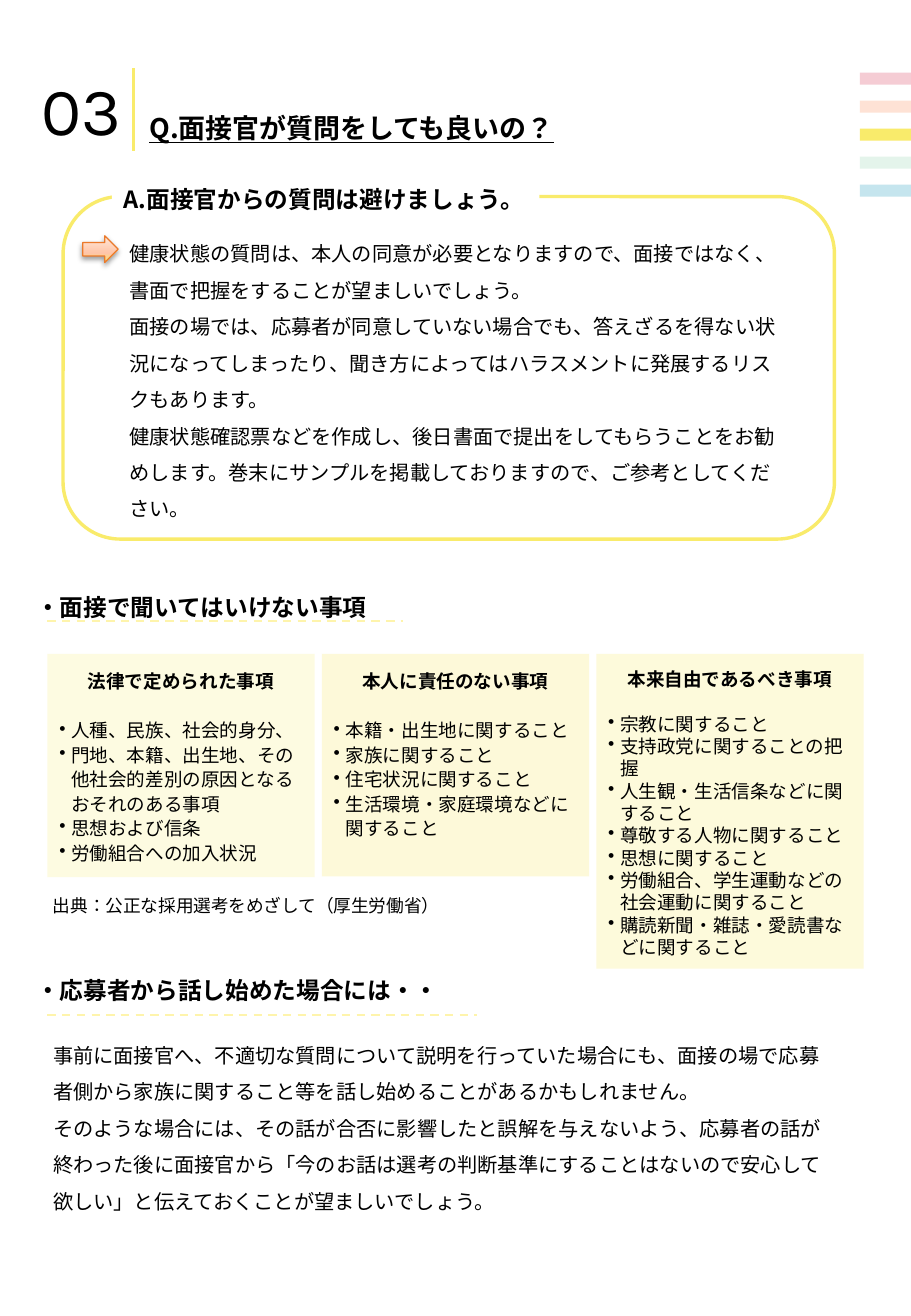
from dataclasses import dataclass

from lxml import etree
from pptx import Presentation
from pptx.dml.color import RGBColor
from pptx.enum.lang import MSO_LANGUAGE_ID
from pptx.enum.shapes import MSO_CONNECTOR, MSO_SHAPE
from pptx.enum.dml import MSO_LINE
from pptx.enum.text import MSO_ANCHOR, MSO_AUTO_SIZE, PP_ALIGN
from pptx.oxml.ns import qn
from pptx.util import Cm, Pt

RECTANGLE, ROUNDED = MSO_SHAPE.RECTANGLE, MSO_SHAPE.ROUNDED_RECTANGLE
RIGHT_ARROW, STRAIGHT = MSO_SHAPE.RIGHT_ARROW, MSO_CONNECTOR.STRAIGHT
TOP, MIDDLE, NO_FIT = MSO_ANCHOR.TOP, MSO_ANCHOR.MIDDLE, MSO_AUTO_SIZE.NONE
LEFT, CENTER, RIGHT, JUSTIFY = PP_ALIGN.LEFT, PP_ALIGN.CENTER, PP_ALIGN.RIGHT, PP_ALIGN.JUSTIFY
DASH, JAPANESE = MSO_LINE.DASH, MSO_LANGUAGE_ID.JAPANESE

BLACK = RGBColor(0x00, 0x00, 0x00)
WHITE = RGBColor(0xFF, 0xFF, 0xFF)
YELLOW = RGBColor(0xF9, 0xEB, 0x6B)
PALE_YELLOW = RGBColor(0xFE, 0xF4, 0xAC)
ORANGE = RGBColor(0xEB, 0x79, 0x2A)
PEACH = RGBColor(0xFF, 0xC5, 0xA7)
PALE_PEACH = RGBColor(0xFF, 0xE8, 0xDA)
PINK = RGBColor(0xDD, 0x49, 0x68)
APRICOT = RGBColor(0xFD, 0x9A, 0x69)
GREEN = RGBColor(0x9F, 0xD9, 0xB8)
BLUE = RGBColor(0x31, 0xA2, 0xC2)

JAPANESE_FONT, NUMBER_FONT = "Noto Sans CJK JP", "Karla"
STRIPES = [(PINK, 28), (APRICOT, 28), (YELLOW, 100), (GREEN, 28), (BLUE, 28)]
CARDS = [
    ("法律で定められた事項", 4.67, 20, 1.1,
     ["人種、民族、社会的身分、", "門地、本籍、出生地、その他社会的差別の原因となるおそれのある事項",
      "思想および信条", "労働組合への加入状況"]),
    ("本人に責任のない事項", 4.65, 25, 1.1,
     ["本籍・出生地に関すること", "家族に関すること", "住宅状況に関すること",
      "生活環境・家庭環境などに関すること"]),
    ("本来自由であるべき事項", 6.58, 24, 1.0,
     ["宗教に関すること", "支持政党に関することの把握", "人生観・生活信条などに関すること",
      "尊敬する人物に関すること", "思想に関すること",
      "労働組合、学生運動などの社会運動に関すること", "購読新聞・雑誌・愛読書などに関すること"]),
]
ANSWER = [
    "健康状態の質問は、本人の同意が必要となりますので、面接ではなく、書面で把握をすることが望ましいでしょう。",
    "面接の場では、応募者が同意していない場合でも、答えざるを得ない状況になってしまったり、"
    "聞き方によってはハラスメントに発展するリスクもあります。",
    "健康状態確認票などを作成し、後日書面で提出をしてもらうことをお勧めします。"
    "巻末にサンプルを掲載しておりますので、ご参考としてください。",
]
ADVICE = [
    "事前に面接官へ、不適切な質問について説明を行っていた場合にも、"
    "面接の場で応募者側から家族に関すること等を話し始めることがあるかもしれません。",
    "そのような場合には、その話が合否に影響したと誤解を与えないよう、応募者の話が終わった後に面接官から"
    "「今のお話は選考の判断基準にすることはないので安心して欲しい」と伝えておくことが望ましいでしょう。",
]


@dataclass
class Box:
    """A region of the slide in centimetres."""
    left: float
    top: float
    width: float
    height: float

    def inner(self, dx, dy, width, height):
        """Return a box offset from this one's top left corner."""
        return Box(self.left + dx, self.top + dy, width, height)

    def lengths(self):
        """Return left, top, width and height as lengths."""
        return [Cm(side) for side in (self.left, self.top, self.width, self.height)]


def write(frame, lines, size, bold=False, align=LEFT, spacing=1.0, anchor=MIDDLE,
          font=JAPANESE_FONT, underline=False):
    """Fill a text frame with one paragraph per line and return the paragraphs."""
    frame.word_wrap, frame.vertical_anchor = True, anchor
    for index, line in enumerate(lines):
        paragraph = frame.add_paragraph() if index else frame.paragraphs[0]
        paragraph.alignment, paragraph.line_spacing = align, spacing
        run = paragraph.add_run()
        run.text = line
        run.font.size, run.font.bold, run.font.name = Pt(size), bold, font
        run.font.underline, run.font.language_id = underline, JAPANESE
        run.font.color.rgb = BLACK
        etree.SubElement(run.font._element, qn("a:ea"), typeface=font)
    return frame.paragraphs


def add_label(slide, box, lines, size, **style):
    """Add a text box."""
    frame = slide.shapes.add_textbox(*box.lengths()).text_frame
    write(frame, lines, size, **style)
    return frame


def add_block(slide, kind, box, color, opacity=100):
    """Add a filled shape without outline or shadow."""
    block = slide.shapes.add_shape(kind, *box.lengths())
    block.shadow.inherit = False
    block.fill.solid()
    block.fill.fore_color.rgb = color
    block.line.fill.background()
    if opacity < 100:
        tint = block._element.spPr.find(qn("a:solidFill")).find(qn("a:srgbClr"))
        etree.SubElement(tint, qn("a:alpha"), val=str(opacity * 1000))
    return block


def add_rule(slide, x1, y1, x2, y2, color, width):
    """Add a straight line and return its line format."""
    rule = slide.shapes.add_connector(STRAIGHT, Cm(x1), Cm(y1), Cm(x2), Cm(y2))
    rule.line.color.rgb, rule.line.width = color, Pt(width)
    etree.SubElement(rule._element.spPr, qn("a:effectLst"))
    return rule.line


def add_header(slide, box):
    """Place the chapter number, its divider and the question title."""
    number = add_label(slide, box.inner(0, 0, 2.31, 1.7), ["03"], 40,
                       align=JUSTIFY, anchor=TOP, font=NUMBER_FONT)
    number.margin_left = number.margin_top = number.margin_right = number.margin_bottom = 0
    divider = box.left + 1.93
    add_rule(slide, divider, box.top + 1.73, divider, box.top, YELLOW, 1.5)
    title = slide.shapes.title
    title.left, title.top, title.width, title.height = box.inner(2.01, 0.66, 14.48, 1.19).lengths()
    write(title.text_frame, ["Q.面接官が質問をしても良いの？"], 16, bold=True, underline=True)
    title.text_frame.auto_size = NO_FIT


def add_stripes(slide, box):
    """Stack the coloured stripes at an equal pitch."""
    stripe_height = 0.25
    pitch = (box.height - stripe_height) / (len(STRIPES) - 1)
    for row, (color, opacity) in enumerate(STRIPES):
        add_block(slide, RECTANGLE, box.inner(0, row * pitch, box.width, stripe_height), color, opacity)


def add_arrow(slide, box):
    """Add the shaded arrow with a three-stop gradient."""
    arrow = add_block(slide, RIGHT_ARROW, box, PEACH)
    arrow.line.color.rgb, arrow.line.width = ORANGE, Pt(0.75)
    arrow.fill.gradient()
    arrow.fill.gradient_angle = 90
    stops = arrow._element.spPr.find(qn("a:gradFill")).find(qn("a:gsLst"))
    for stop in list(stops):
        stops.remove(stop)
    for position, color in ((0, YELLOW), (35, PEACH), (100, PALE_PEACH)):
        stop = etree.SubElement(stops, qn("a:gs"), pos=str(position * 1000))
        etree.SubElement(stop, qn("a:srgbClr"), val=str(color))
    effects = arrow._element.spPr.find(qn("a:effectLst"))
    shade = etree.SubElement(effects, qn("a:outerShdw"), blurRad=str(Pt(3.1)), dist=str(Pt(1.6)),
                             dir="5400000", rotWithShape="0")
    tint = etree.SubElement(shade, qn("a:srgbClr"), val=str(BLACK))
    etree.SubElement(tint, qn("a:alpha"), val="38000")


def add_answer(slide, box):
    """Place the framed answer with its heading, arrow and text."""
    border = add_block(slide, ROUNDED, box, WHITE)
    border.adjustments[0] = 0.167
    border.line.color.rgb, border.line.width = YELLOW, Pt(2)
    heading = add_block(slide, RECTANGLE, box.inner(1.02, -0.45, 8.94, 0.99), WHITE)
    write(heading.text_frame, ["A.面接官からの質問は避けましょう。"], 14, bold=True)
    add_label(slide, box.inner(1.14, 0.61, 14.33, 6.25), ANSWER, 12, spacing=1.5)
    add_arrow(slide, box.inner(0.41, 0.82, 0.74, 0.56))


def add_heading(slide, box, wording, rule_drop):
    """Place a section heading over a dashed rule."""
    rule_top = box.top + rule_drop
    rule = add_rule(slide, box.left + 0.48, rule_top, box.left + box.width, rule_top, PALE_YELLOW, 1.25)
    rule.dash_style = DASH
    add_label(slide, box, [wording], 14, bold=True)


def add_card(slide, box, heading, opacity, spacing, items):
    """Place a tinted card with a heading and bulleted items."""
    card = add_block(slide, RECTANGLE, box, YELLOW, opacity)
    card.text_frame.margin_top = Cm(0.3)
    title, *bullets = write(card.text_frame, [heading, *items], 11, spacing=spacing, anchor=TOP)
    title.alignment, title.runs[0].font.bold = CENTER, True
    title.space_after = Pt(13.2 * spacing)
    for bullet in bullets:
        properties = bullet._p.get_or_add_pPr()
        properties.set("marL", str(Cm(0.25)))
        properties.set("indent", str(-Cm(0.25)))
        etree.SubElement(properties, qn("a:buChar"), char="•")


def add_cards(slide, box):
    """Set the cards side by side with equal gaps."""
    card_width = 5.59
    pitch = (box.width - card_width) / (len(CARDS) - 1)
    for column, (heading, height, opacity, spacing, items) in enumerate(CARDS):
        add_card(slide, box.inner(column * pitch, 0, card_width, height), heading, opacity, spacing, items)


def main():
    """Build the interview guidance slide."""
    deck = Presentation()
    deck.slide_width, deck.slide_height = Cm(19.05), Cm(27.51)
    slide = deck.slides.add_slide(deck.slide_layouts[5])
    add_header(slide, Box(0.86, 1.42, 16.49, 1.85))
    add_stripes(slide, Box(17.98, 1.52, 1.07, 2.59))
    add_answer(slide, Box(1.32, 4.11, 16.13, 7.16))
    add_heading(slide, Box(0.51, 12.17, 7.92, 1.04), "・面接で聞いてはいけない事項", 0.81)
    add_cards(slide, Box(0.99, 13.67, 17.07, 6.58))
    add_label(slide, Box(0.41, 18.59, 9.04, 0.71), ["出典：公正な採用選考をめざして（厚生労働省）"],
              10.5, align=RIGHT, anchor=TOP)
    add_heading(slide, Box(0.51, 20.17, 9.47, 1.04), "・応募者から話し始めた場合には・・", 1.04)
    add_label(slide, Box(0.86, 21.34, 16.76, 4.24), ADVICE, 12, spacing=1.5)
    deck.save("out.pptx")


if __name__ == "__main__":
    main()
